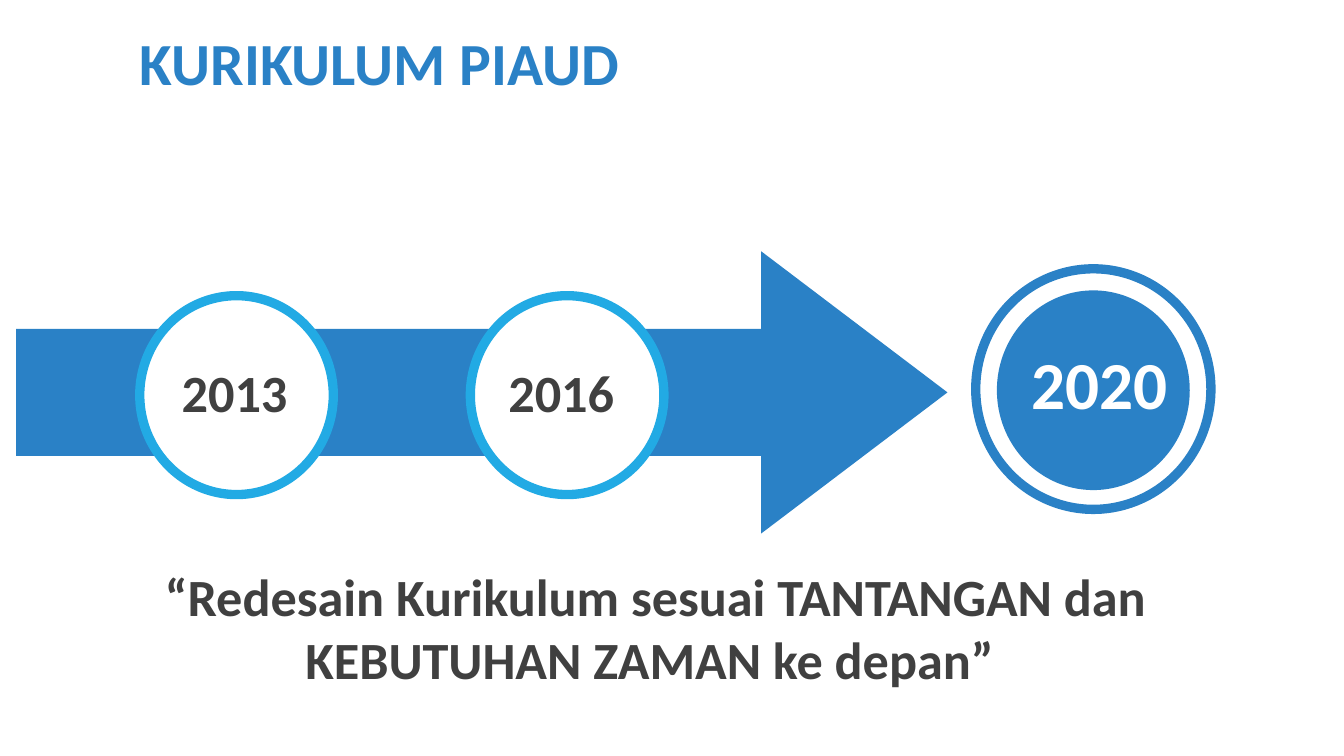
from dataclasses import dataclass

from lxml.etree import SubElement
from pptx import Presentation
from pptx.dml.color import RGBColor
from pptx.enum.shapes import MSO_SHAPE
from pptx.enum.text import MSO_ANCHOR, PP_ALIGN
from pptx.oxml.ns import qn
from pptx.util import Inches, Pt


@dataclass(frozen=True)
class Theme:
    font: str = "Calibri"
    blue: str = "2A81C6"
    cyan: str = "22AAE4"
    white: str = "FFFFFF"
    dark: str = "404040"
    title_size: int = 32
    year_size: int = 28
    final_size: int = 36
    quote_size: int = 28
    ring_width: int = 5


@dataclass(frozen=True)
class Box:
    left: float
    top: float
    width: float
    height: float

    def share(self, left, top, width, height):
        return Box(
            self.left + left * self.width,
            self.top + top * self.height,
            width * self.width,
            height * self.height,
        )

    def lengths(self):
        return [Inches(value) for value in (self.left, self.top, self.width, self.height)]


THEME = Theme()


def add_text(shapes, box, text, size, color=THEME.dark, align=PP_ALIGN.CENTER,
             anchor=MSO_ANCHOR.TOP):
    frame = shapes.add_textbox(*box.lengths()).text_frame
    frame.word_wrap = True
    frame.vertical_anchor = anchor
    paragraph = frame.paragraphs[0]
    paragraph.alignment = align
    run = paragraph.add_run()
    run.text = text
    run.font.name = THEME.font
    run.font.size = Pt(size)
    run.font.bold = True
    run.font.color.rgb = RGBColor.from_string(color)


def add_filled(shapes, kind, box, fill, line=None):
    shape = shapes.add_shape(kind, *box.lengths())
    shape.shadow.inherit = False
    shape.fill.solid()
    shape.fill.fore_color.rgb = RGBColor.from_string(fill)
    if line:
        shape.line.color.rgb = RGBColor.from_string(line)
        shape.line.width = Pt(THEME.ring_width)
    else:
        shape.line.fill.background()
    return shape


def add_title(shapes, box):
    add_text(shapes, box, "KURIKULUM PIAUD", THEME.title_size, color=THEME.blue,
             align=PP_ALIGN.LEFT, anchor=MSO_ANCHOR.MIDDLE)


def add_arrow(shapes, box):
    arrow = add_filled(shapes, MSO_SHAPE.RIGHT_ARROW, box, THEME.blue)
    arrow.adjustments[0] = 0.45
    arrow.adjustments[1] = 0.66


def add_milestone(shapes, box, year, label_left):
    add_filled(shapes, MSO_SHAPE.OVAL, box, THEME.white, THEME.cyan)
    add_text(shapes, box.share(label_left, 0.29, 0.84, 0.39), year, THEME.year_size)


def add_final_milestone(shapes, box, year):
    group = shapes.add_group_shape()
    ring = add_filled(group.shapes, MSO_SHAPE.OVAL, box, THEME.white, THEME.blue)
    fill_color = ring.element.spPr.find(qn("a:solidFill"))[0]
    SubElement(fill_color, qn("a:alpha")).set("val", "70000")
    add_filled(group.shapes, MSO_SHAPE.OVAL, box.share(0.09, 0.09, 0.82, 0.83), THEME.blue)
    add_text(shapes, box.share(0.15, 0.28, 0.75, 0.4), year, THEME.final_size,
             color=THEME.white)


def add_quote(shapes, box):
    add_text(shapes, box,
             "“Redesain Kurikulum sesuai TANTANGAN dan KEBUTUHAN ZAMAN ke depan” ",
             THEME.quote_size)


def main():
    presentation = Presentation()
    page = Box(0, 0, 10, 10 * 9 / 16)
    presentation.slide_width = Inches(page.width)
    presentation.slide_height = Inches(page.height)
    slide = presentation.slides.add_slide(presentation.slide_layouts[6])
    shapes = slide.shapes

    add_title(shapes, Box(0.94, 0, 6.81, 0.92))
    add_arrow(shapes, Box(0.12, 1.87, 6.93, 2.1))
    for year, left, label_left in (("2013", 1.04, 0.07), ("2016", 3.5, 0.05)):
        add_milestone(shapes, Box(left, 2.2, 1.44, 1.48), year, label_left)
    add_final_milestone(shapes, Box(7.26, 2, 1.75, 1.79), "2020")
    add_quote(shapes, Box(0.67, 4.15, 8.41, 1.04))

    presentation.save("out.pptx")


if __name__ == "__main__":
    main()
